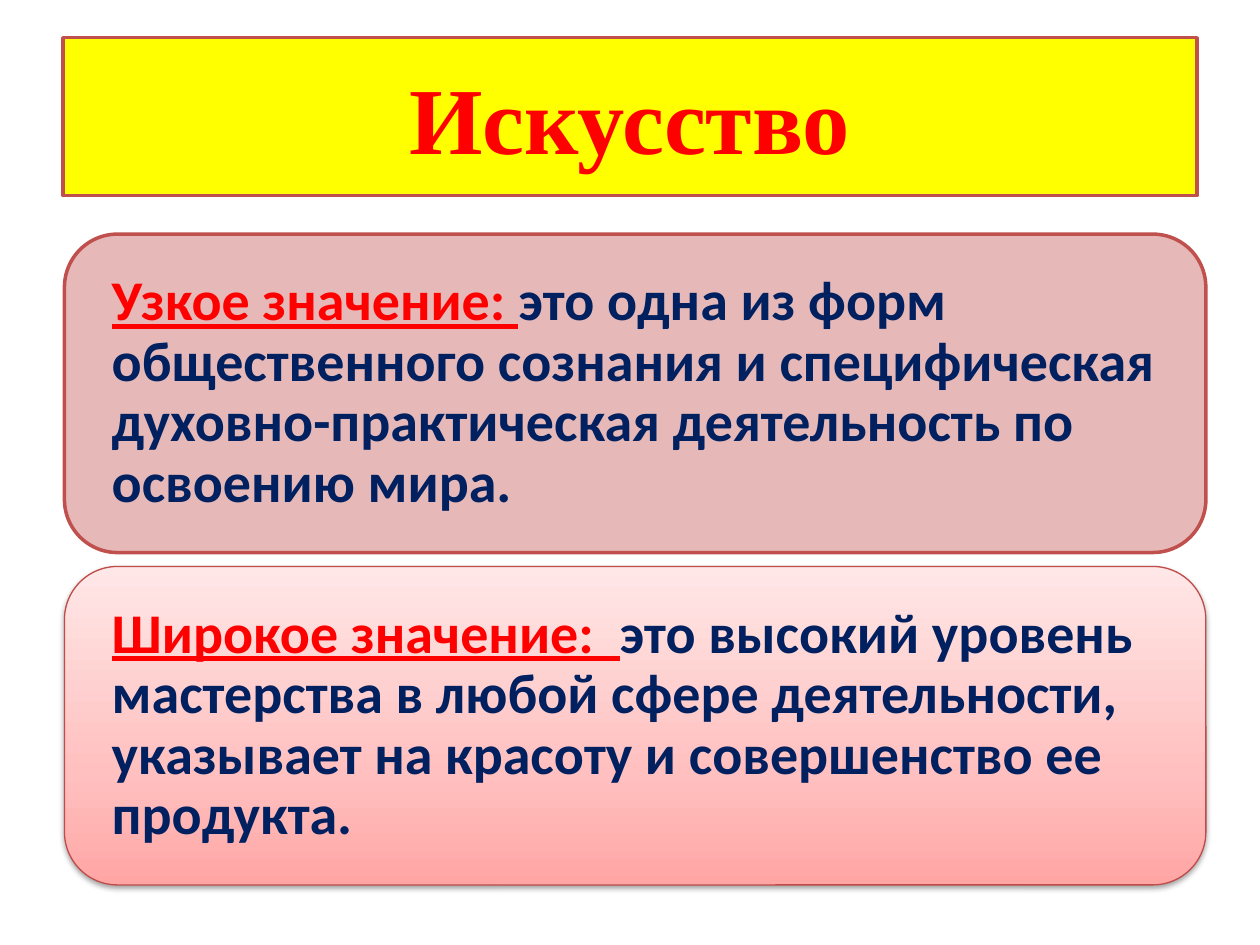
"""Build a slide that defines art in its narrow and its broad meaning."""
import copy

import lxml.etree
import pptx
import pptx.dml.color
import pptx.enum.shapes
import pptx.enum.text
import pptx.oxml.ns
import pptx.util

Cm = pptx.util.Cm
Pt = pptx.util.Pt
RGBColor = pptx.dml.color.RGBColor
qn = pptx.oxml.ns.qn

YELLOW = RGBColor(0xFF, 0xFF, 0x00)
RED = RGBColor(0xFF, 0x00, 0x00)
NAVY = RGBColor(0x00, 0x20, 0x60)
BRICK = RGBColor(0xC0, 0x50, 0x4D)
DARK_BRICK = RGBColor(0xBF, 0x4C, 0x48)
ROSE = RGBColor(0xE6, 0xB9, 0xB8)
BLACK = RGBColor(0x00, 0x00, 0x00)
GRADIENT = (
    (0, RGBColor(0xFF, 0xA6, 0xA5)),
    (0.35, RGBColor(0xFF, 0xC0, 0xBF)),
    (1, RGBColor(0xFF, 0xE7, 0xE7)),
)

TITLE_FONT = {"name": "Times New Roman", "size": Pt(54), "bold": True}
BODY_FONT = {"name": "Calibri", "size": Pt(32), "bold": True}
TERM_FONT = {**BODY_FONT, "underline": True}
TITLE_FRAME = {
    "word_wrap": True,
    "vertical_anchor": pptx.enum.text.MSO_ANCHOR.MIDDLE,
}
CARD_FRAME = {
    **TITLE_FRAME,
    "margin_left": Cm(0.64),
    "margin_right": Cm(0.64),
}


def apply_format(target, values):
    """Set each attribute of the target from a dict."""
    for name, value in values.items():
        setattr(target, name, value)


def add_run(paragraph, text, font, color):
    """Append formatted text to a paragraph."""
    run = paragraph.add_run()
    run.text = text
    apply_format(run.font, font)
    run.font.color.rgb = color


def set_outline(shape, color, width):
    """Give a shape a solid outline."""
    shape.line.color.rgb = color
    shape.line.width = Pt(width)


def set_solid(shape, color):
    """Fill a shape with one colour."""
    shape.fill.solid()
    shape.fill.fore_color.rgb = color


def set_gradient(shape, colors):
    """Fill a shape with a gradient that runs upwards."""
    shape.fill.gradient()
    shape.fill.gradient_angle = 90
    stop_list = shape._element.spPr.find(qn("a:gradFill")).find(qn("a:gsLst"))
    while len(stop_list) < len(colors):
        stop_list.append(copy.deepcopy(stop_list[-1]))
    for stop, (position, color) in zip(shape.fill.gradient_stops, colors):
        stop.position = position
        stop.color.rgb = color


def add_shadow(shape):
    """Put a soft shadow below a shape."""
    effects = shape._element.spPr.find(qn("a:effectLst"))
    shadow = lxml.etree.SubElement(
        effects, qn("a:outerShdw"), blurRad=str(Pt(3.1)), dist=str(Pt(1.6)),
        dir="5400000", rotWithShape="0")
    color = lxml.etree.SubElement(shadow, qn("a:srgbClr"), val=str(BLACK))
    lxml.etree.SubElement(color, qn("a:alpha"), val="38000")


def fill_title(slide, text):
    """Place and format the title."""
    title = slide.shapes.title
    apply_format(title, {"left": Cm(1.27), "top": Cm(0.76),
                         "width": Cm(22.86), "height": Cm(3.18)})
    set_solid(title, YELLOW)
    set_outline(title, BRICK, 2)
    apply_format(title.text_frame, TITLE_FRAME)
    paragraph = title.text_frame.paragraphs[0]
    paragraph.alignment = pptx.enum.text.PP_ALIGN.CENTER
    add_run(paragraph, text, TITLE_FONT, RED)


def add_card(slide, top, term, meaning):
    """Add a rounded card with an underlined term and its meaning."""
    card = slide.shapes.add_shape(
        pptx.enum.shapes.MSO_SHAPE.ROUNDED_RECTANGLE,
        Cm(1.3), Cm(top), Cm(23.01), Cm(6.42))
    card.shadow.inherit = False
    apply_format(card.text_frame, CARD_FRAME)
    paragraph = card.text_frame.paragraphs[0]
    apply_format(paragraph, {"alignment": pptx.enum.text.PP_ALIGN.LEFT,
                             "line_spacing": 0.9})
    add_run(paragraph, term, TERM_FONT, RED)
    add_run(paragraph, meaning, BODY_FONT, NAVY)
    return card


def main():
    """Build and save the presentation."""
    presentation = pptx.Presentation()
    presentation.slide_width = Cm(25.4)
    presentation.slide_height = Cm(19.05)
    slide = presentation.slides.add_slide(presentation.slide_layouts[5])
    fill_title(slide, "Искусство")

    narrow = add_card(
        slide, 4.72, "Узкое значение: ",
        "это одна из форм общественного сознания и специфическая "
        "духовно-практическая деятельность по освоению мира.")
    set_solid(narrow, ROSE)
    set_outline(narrow, BRICK, 2)

    broad = add_card(
        slide, 11.42, "Широкое значение:  ",
        "это высокий уровень мастерства в любой сфере деятельности, "
        "указывает на красоту и совершенство ее продукта.")
    set_gradient(broad, GRADIENT)
    set_outline(broad, DARK_BRICK, 0.75)
    add_shadow(broad)

    presentation.save("out.pptx")


if __name__ == "__main__":
    main()
